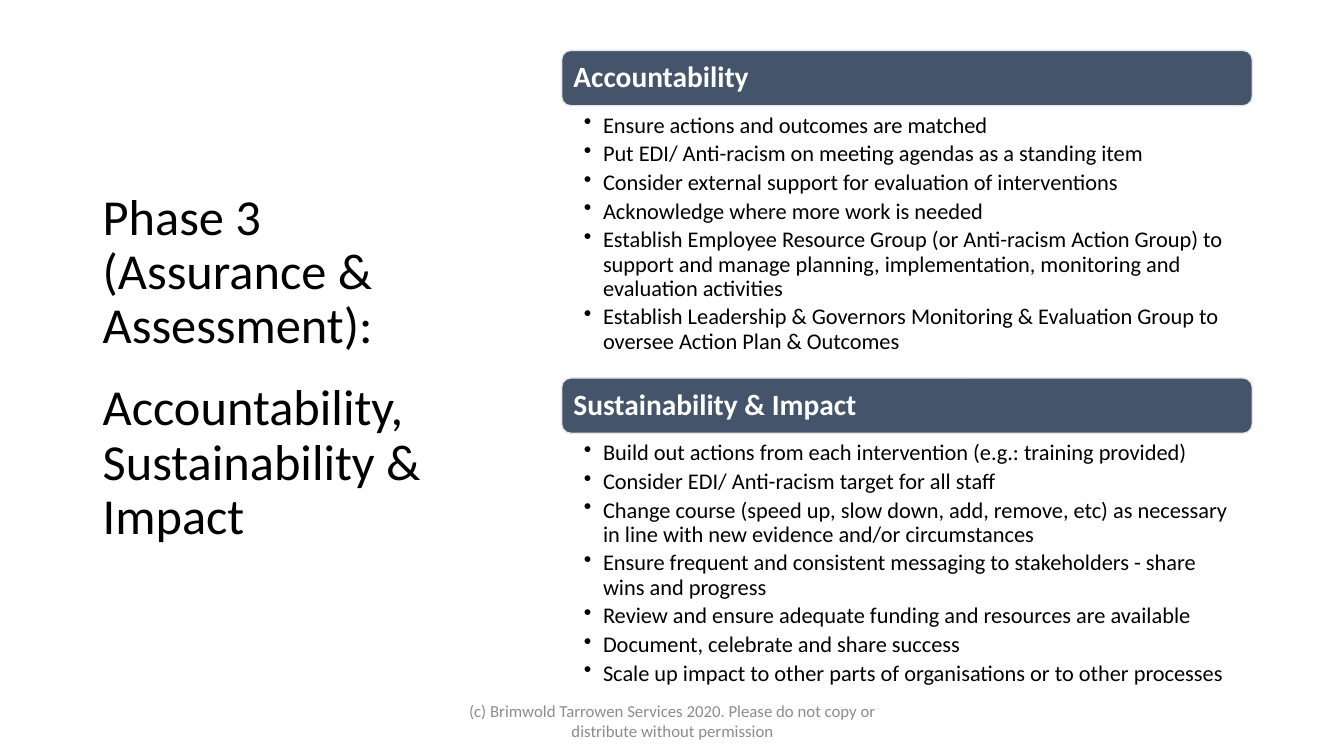
"""Build the Phase 3 slide: a title beside two headed bullet lists."""
from dataclasses import dataclass

from lxml.etree import SubElement
from pptx import Presentation
from pptx.dml.color import RGBColor
from pptx.enum.shapes import MSO_SHAPE
from pptx.enum.text import MSO_ANCHOR, PP_ALIGN
from pptx.oxml.ns import qn
from pptx.slide import Slide
from pptx.text.text import TextFrame
from pptx.util import Inches, Length, Pt

BLACK = RGBColor(0x00, 0x00, 0x00)
WHITE = RGBColor(0xFF, 0xFF, 0xFF)
SLATE = RGBColor(0x44, 0x54, 0x6A)
PALE_GREY = RGBColor(0xE7, 0xE6, 0xE6)
FOOTER_GREY = RGBColor(0x8C, 0x8C, 0x8C)

FONT = "Calibri"
SLIDE_WIDTH = Inches(13.33)
SLIDE_HEIGHT = Inches(7.5)
SECTION_LEFT, SECTION_WIDTH = 41.79, 51.39
HEADING_HEIGHT = 7.33
LIST_OFFSET = 8.0
BULLET_INDENT = 1.43


@dataclass(frozen=True)
class Area:
    """A rectangle in percent of the slide's width and height."""

    left: float
    top: float
    width: float
    height: float

    def box(self) -> tuple[Length, Length, Length, Length]:
        return across(self.left), down(self.top), across(self.width), down(self.height)


@dataclass(frozen=True)
class Style:
    """How a block of text looks."""

    size: float
    color: RGBColor
    bold: bool = False
    align: PP_ALIGN = PP_ALIGN.LEFT
    line_spacing: float = 0.9
    space_after: float = 0


@dataclass(frozen=True)
class Section:
    """A heading bar with its bullet list."""

    heading: str
    top: float
    list_height: float
    actions: tuple[str, ...]


TITLE = Style(36, BLACK)
HEADING = Style(21, WHITE, bold=True)
ACTION = Style(16, BLACK, space_after=3.2)
FOOTER = Style(12, FOOTER_GREY, align=PP_ALIGN.CENTER, line_spacing=1.0)

SECTIONS = (
    Section("Accountability", 6.67, 39.47, (
        "Ensure actions and outcomes are matched",
        "Put EDI/ Anti-racism on meeting agendas as a standing item",
        "Consider external support for evaluation of interventions",
        "Acknowledge where more work is needed",
        "Establish Employee Resource Group (or Anti-racism Action Group) to support "
        "and manage planning, implementation, monitoring and evaluation activities",
        "Establish Leadership & Governors Monitoring & Evaluation Group to oversee "
        "Action Plan & Outcomes",
    )),
    Section("Sustainability & Impact", 50.0, 34.8, (
        "Build out actions from each intervention (e.g.: training provided)",
        "Consider EDI/ Anti-racism target for all staff",
        "Change course (speed up, slow down, add, remove, etc) as necessary in line "
        "with new evidence and/or circumstances",
        "Ensure frequent and consistent messaging to stakeholders - share wins and progress",
        "Review and ensure adequate funding and resources are available",
        "Document, celebrate and share success",
        "Scale up impact to other parts of organisations or to other processes",
    )),
)


def across(percent: float) -> Length:
    """Convert a share of the slide's width to a length."""
    return Length(round(SLIDE_WIDTH * percent / 100))


def down(percent: float) -> Length:
    """Convert a share of the slide's height to a length."""
    return Length(round(SLIDE_HEIGHT * percent / 100))


def write(frame: TextFrame, text: str, style: Style, anchor: MSO_ANCHOR) -> None:
    """Fill a text frame and format its paragraphs and runs."""
    frame.text = text
    frame.word_wrap = True
    frame.vertical_anchor = anchor
    for paragraph in frame.paragraphs:
        paragraph.alignment = style.align
        paragraph.line_spacing = style.line_spacing
        paragraph.space_after = Pt(style.space_after)
        for run in paragraph.runs:
            run.font.name = FONT
            run.font.size = Pt(style.size)
            run.font.bold = style.bold
            run.font.color.rgb = style.color


def add_text(slide: Slide, area: Area, text: str, style: Style,
             anchor: MSO_ANCHOR = MSO_ANCHOR.MIDDLE) -> TextFrame:
    """Place a text box and return its frame."""
    frame = slide.shapes.add_textbox(*area.box()).text_frame
    write(frame, text, style, anchor)
    return frame


def add_bullets(frame: TextFrame) -> None:
    """Give every paragraph a hanging bullet."""
    for paragraph in frame.paragraphs:
        properties = paragraph._p.get_or_add_pPr()
        properties.set("marL", str(across(BULLET_INDENT)))
        properties.set("indent", str(-across(BULLET_INDENT)))
        SubElement(properties, qn("a:buChar")).set("char", "•")


def add_section(slide: Slide, section: Section) -> None:
    """Draw a heading bar and the list below it."""
    heading_area = Area(SECTION_LEFT, section.top, SECTION_WIDTH, HEADING_HEIGHT)
    bar = slide.shapes.add_shape(MSO_SHAPE.ROUNDED_RECTANGLE, *heading_area.box())
    bar.shadow.inherit = False
    bar.fill.solid()
    bar.fill.fore_color.rgb = SLATE
    bar.line.color.rgb = PALE_GREY
    bar.line.width = Pt(1)
    bar.text_frame.margin_left = across(0.68)
    write(bar.text_frame, section.heading, HEADING, MSO_ANCHOR.MIDDLE)

    list_area = Area(SECTION_LEFT, section.top + LIST_OFFSET, SECTION_WIDTH, section.list_height)
    actions = add_text(slide, list_area, "\n".join(section.actions), ACTION, MSO_ANCHOR.TOP)
    actions.margin_left, actions.margin_right = across(1.65), across(1.2)
    actions.margin_top = actions.margin_bottom = down(0.4)
    add_bullets(actions)


def main() -> None:
    """Build and save the slide."""
    presentation = Presentation()
    presentation.slide_width, presentation.slide_height = SLIDE_WIDTH, SLIDE_HEIGHT
    slide = presentation.slides.add_slide(presentation.slide_layouts[6])
    add_text(slide, Area(6.9, 8.13, 29.71, 81.2),
             "Phase 3 (Assurance & Assessment):\v\vAccountability, Sustainability & Impact", TITLE)
    for section in SECTIONS:
        add_section(slide, section)
    add_text(slide, Area(33.16, 92.67, 33.76, 5.33),
             "(c) Brimwold Tarrowen Services 2020. Please do not copy or "
             "distribute without permission", FOOTER)
    presentation.save("out.pptx")


if __name__ == "__main__":
    main()
